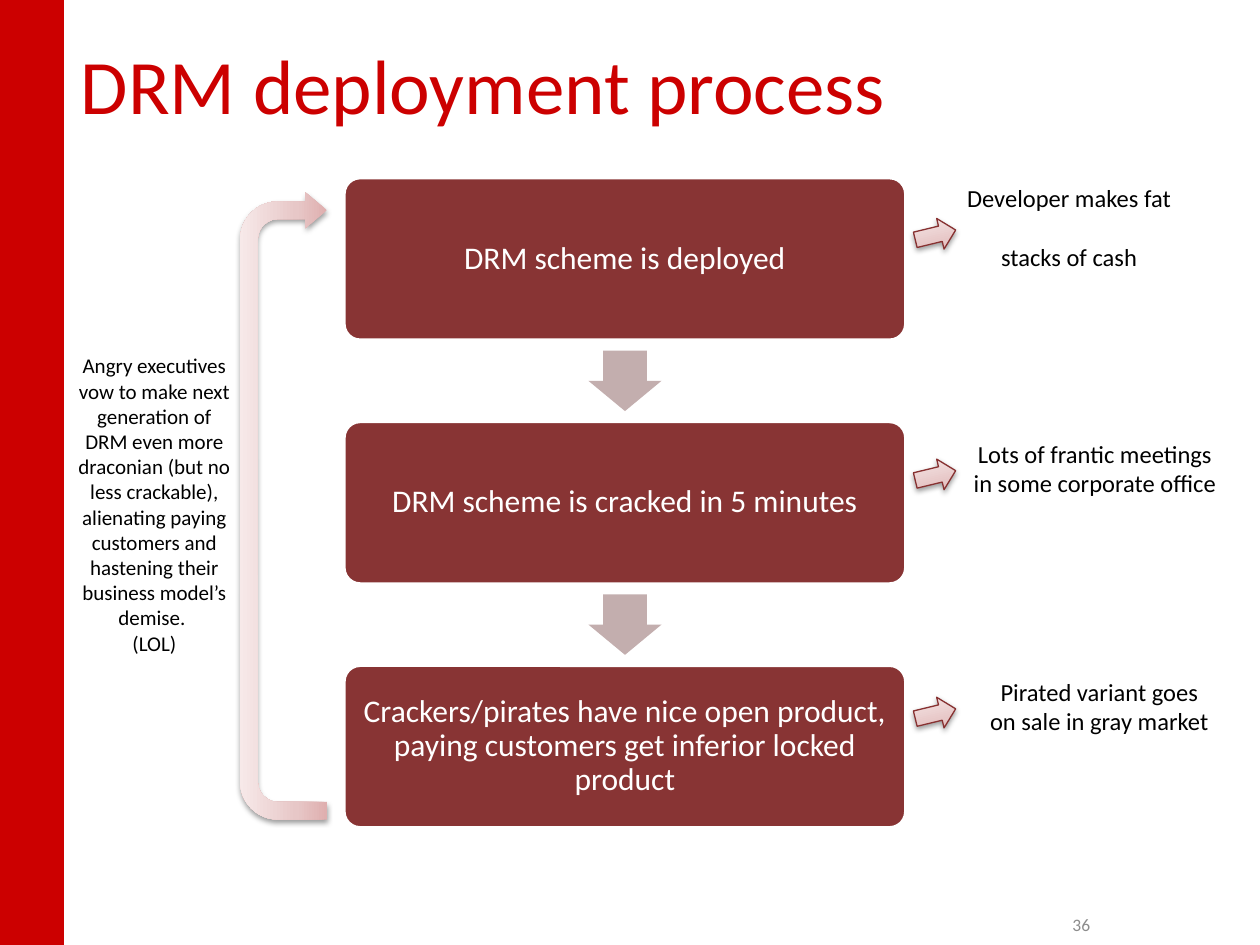
import pptx
import pptx.dml.color
import pptx.enum.shapes
import pptx.enum.text
import pptx.oxml
import pptx.oxml.ns
import pptx.util

Inches = pptx.util.Inches
RGBColor = pptx.dml.color.RGBColor
SHAPE = pptx.enum.shapes.MSO_SHAPE
ALIGN = pptx.enum.text.PP_ALIGN
MIDDLE = pptx.enum.text.MSO_ANCHOR.MIDDLE

RED = RGBColor(0xCC, 0x00, 0x00)
MAROON = RGBColor(0x88, 0x34, 0x34)
DUSTY = RGBColor(0xC3, 0xAE, 0xAE)
OUTLINE = RGBColor(0x87, 0x31, 0x31)
GRAY = RGBColor(0x8C, 0x8C, 0x8C)
BLACK = RGBColor(0x00, 0x00, 0x00)
WHITE = RGBColor(0xFF, 0xFF, 0xFF)
PINK_STOPS = [
    (0, RGBColor(0xDF, 0xAF, 0xAF)),
    (35, RGBColor(0xE7, 0xC7, 0xC7)),
    (100, RGBColor(0xF7, 0xE9, 0xE9)),
]

STEP_LEFT, STEP_TOP, STEP_WIDTH, STEP_HEIGHT = 2.73, 1.41, 4.46, 1.29
STEP_PITCH = (5.28 - STEP_TOP) / 2
STEPS = [
    "DRM scheme is deployed",
    "DRM scheme is cracked in 5 minutes",
    "Crackers/pirates have nice open product,\v"
    "paying customers get inferior locked product",
]
# text, left, top, width, extra points between lines
OUTCOMES = [
    ("Developer makes fat\nstacks of cash", 7.56, 1.52, 1.85, 17),
    ("Lots of frantic meetings\nin some corporate office", 7.55, 3.43, 2.28, 0),
    ("Pirated variant goes\non sale in gray market", 7.62, 5.32, 2.21, 0),
]
EXECUTIVES = (
    "Angry executives vow to make next generation of DRM even more draconian "
    "(but no less crackable), alienating paying customers and hastening their "
    "business model’s demise. \n(LOL)"
)


def write_text(shape, text, size, color, align=ALIGN.CENTER, margin=None, gap=0, spacing=None):
    """Fill a shape with text; gap is the space before each later paragraph."""
    frame = shape.text_frame
    frame.text = text
    frame.word_wrap = True
    frame.vertical_anchor = MIDDLE
    if margin is not None:
        for side in ("left", "right", "top", "bottom"):
            setattr(frame, f"margin_{side}", Inches(margin))
    font_format = {"name": "Calibri", "size": pptx.util.Pt(size)}
    for index, para in enumerate(frame.paragraphs):
        para.alignment = align
        para.line_spacing = spacing
        if index and gap:
            para.space_before = pptx.util.Pt(gap)
        for span in para.runs:
            for name, value in font_format.items():
                setattr(span.font, name, value)
            span.font.color.rgb = color


def add_text(slide, text, left, top, width, height, size, color, **options):
    box = slide.shapes.add_textbox(*map(Inches, (left, top, width, height)))
    write_text(box, text, size, color, **options)


def add_shape(slide, kind, left, top, width, height, fill=None, line=None,
              line_width=0.75, rotation=0, adjustments=()):
    shape = slide.shapes.add_shape(kind, *map(Inches, (left, top, width, height)))
    shape.shadow.inherit = False
    shape.rotation = rotation
    for index, value in enumerate(adjustments):
        shape.adjustments[index] = value
    if fill is not None:
        shape.fill.solid()
        shape.fill.fore_color.rgb = fill
    if line is None:
        shape.line.fill.background()
    else:
        shape.line.color.rgb = line
        shape.line.width = pptx.util.Pt(line_width)
    return shape


def add_pink_arrow(slide, kind, *place, **options):
    """Add an arrow with the pink gradient and a soft shadow below it."""
    arrow = add_shape(slide, kind, *place, **options)
    namespace = pptx.oxml.ns.nsdecls("a")
    stops = "".join(
        f'<a:gs pos="{percent * 1000}"><a:srgbClr val="{color}"/></a:gs>'
        for percent, color in PINK_STOPS
    )
    gradient = pptx.oxml.parse_xml(
        f'<a:gradFill {namespace} rotWithShape="1"><a:gsLst>{stops}</a:gsLst>'
        '<a:lin ang="16200000" scaled="0"/></a:gradFill>'
    )
    shadow = pptx.oxml.parse_xml(
        f'<a:outerShdw {namespace} blurRad="{pptx.util.Pt(3.1)}" '
        f'dist="{pptx.util.Pt(1.6)}" dir="5400000" rotWithShape="0">'
        '<a:srgbClr val="000000"><a:alpha val="38000"/></a:srgbClr></a:outerShdw>'
    )
    properties = arrow.element.spPr
    properties.find(pptx.oxml.ns.qn("a:prstGeom")).addnext(gradient)
    properties.find(pptx.oxml.ns.qn("a:effectLst")).append(shadow)


def add_title(slide, text):
    title = slide.shapes.title
    place = {"left": 0.54, "top": 0.04, "width": 9.46, "height": 1.25}
    for name, value in place.items():
        setattr(title, name, Inches(value))
    write_text(title, text, 44, RED, align=ALIGN.LEFT)


def add_steps(slide):
    arrow_width, arrow_height = 0.48, 0.58
    arrow_left = STEP_LEFT + (STEP_WIDTH - arrow_width) / 2
    arrow_offset = (STEP_HEIGHT + STEP_PITCH - arrow_height) / 2
    for index, text in enumerate(STEPS):
        top = STEP_TOP + index * STEP_PITCH
        step = add_shape(slide, SHAPE.ROUNDED_RECTANGLE, STEP_LEFT, top, STEP_WIDTH,
                         STEP_HEIGHT, fill=MAROON, line=WHITE, line_width=2,
                         adjustments=[0.1])
        write_text(step, text, 18, WHITE, margin=0.07, spacing=0.9)
        if index < len(STEPS) - 1:
            add_shape(slide, SHAPE.RIGHT_ARROW, arrow_left, top + arrow_offset,
                      arrow_width, arrow_height, fill=DUSTY, rotation=90,
                      adjustments=[0.6, 0.5])


def add_outcomes(slide):
    for text, left, top, width, gap in OUTCOMES:
        add_pink_arrow(slide, SHAPE.RIGHT_ARROW, 7.26, top + 0.22, 0.33, 0.25,
                       line=OUTLINE, rotation=346.4)
        add_text(slide, text, left, top, width, 0.57, 14, BLACK, gap=gap)


def add_return_loop(slide):
    add_pink_arrow(slide, SHAPE.U_TURN_ARROW, -0.24, 3.67, 4.98, 0.69, rotation=270,
                   adjustments=[0.204, 0.207, 0.25, 0.438, 1])
    add_text(slide, EXECUTIVES, 0.5, 2.74, 1.45, 2.52, 12, BLACK)


def main():
    deck = pptx.Presentation()
    deck.slide_width, deck.slide_height = Inches(10), Inches(7.5)
    slide = deck.slides.add_slide(deck.slide_layouts[5])
    add_shape(slide, SHAPE.RECTANGLE, 0, 0, 0.5, 7.5, fill=RED, line=RED)
    add_title(slide, "DRM deployment process")
    add_text(slide, "36", 6.42, 7.21, 2.33, 0.26, 10, GRAY, align=ALIGN.RIGHT)
    add_steps(slide)
    add_outcomes(slide)
    add_return_loop(slide)
    deck.save("out.pptx")


if __name__ == "__main__":
    main()
